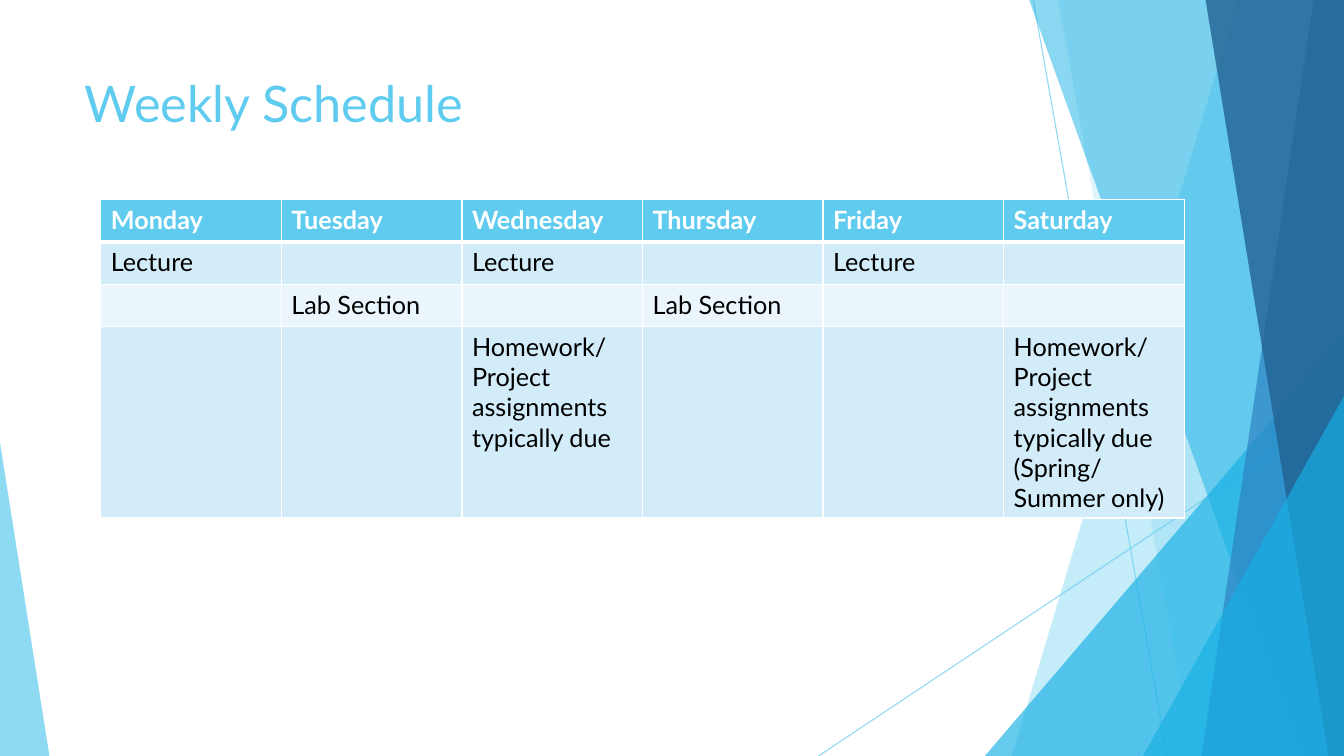
from lxml import etree
from pptx import Presentation
from pptx.dml.color import RGBColor
from pptx.enum.shapes import MSO_CONNECTOR, MSO_SHAPE
from pptx.enum.text import MSO_ANCHOR, MSO_AUTO_SIZE, PP_ALIGN
from pptx.oxml.ns import qn
from pptx.util import Inches, Pt

STRAIGHT = MSO_CONNECTOR.STRAIGHT
TRIANGLE = MSO_SHAPE.ISOSCELES_TRIANGLE
TOP = MSO_ANCHOR.TOP
LEFT = PP_ALIGN.LEFT
NO_AUTOFIT = MSO_AUTO_SIZE.NONE

WIDTH, HEIGHT = Inches(13.33), Inches(7.5)
FONT = "Lato"
COLORS = {
    "sky": "5FCBEF",
    "cyan": "17B0E4",
    "blue": "2E83C3",
    "navy": "226292",
    "band": "D2ECF9",
    "pale": "EAF6FC",
    "white": "FFFFFF",
    "black": "000000",
}
HOMEWORK = "Homework/ Project assignments typically due"
SCHEDULE = [
    ["Monday", "Tuesday", "Wednesday", "Thursday", "Friday", "Saturday"],
    ["Lecture", "", "Lecture", "", "Lecture", ""],
    ["", "Lab Section", "", "Lab Section", "", ""],
    ["", "", HOMEWORK, "", "", HOMEWORK + "\n(Spring/\nSummer only)"],
]
ROW_FILLS = ["sky", "band", "pale", "band"]
ROW_HEIGHTS = [5.6, 5.6, 5.6, 22.4]


def across(percent):
    """Turn a percentage of the slide width into a length."""
    return round(WIDTH * percent / 100)


def down(percent):
    """Turn a percentage of the slide height into a length."""
    return round(HEIGHT * percent / 100)


def rgb(name):
    """Look up a named colour."""
    return RGBColor.from_string(COLORS[name])


def set_opacity(shape, percent):
    """Make the first colour of a shape partly transparent."""
    color = next(shape._element.spPr.iter(qn("a:srgbClr")))
    etree.SubElement(color, qn("a:alpha"), val=str(percent * 1000))


def paint(shape, color, opacity):
    """Give a shape a plain translucent fill without outline or shadow."""
    shape.shadow.inherit = False
    shape.fill.solid()
    shape.fill.fore_color.rgb = rgb(color)
    shape.line.fill.background()
    set_opacity(shape, opacity)


def add_ray(slide, x1, y1, x2, y2):
    """Draw a thin decorative line."""
    ray = slide.shapes.add_connector(
        STRAIGHT, across(x1), down(y1), across(x2), down(y2))
    ray.line.color.rgb = rgb("sky")
    ray.line.width = Pt(0.75)
    set_opacity(ray, 70)
    etree.SubElement(ray._element.spPr, qn("a:effectLst"))


def add_shard(slide, top_x, bottom_x, color, opacity):
    """Draw a full-height band from a slanted edge to the right margin."""
    outline = slide.shapes.build_freeform(across(top_x), 0)
    outline.add_line_segments(
        [(WIDTH, 0), (WIDTH, HEIGHT), (across(bottom_x), HEIGHT)])
    paint(outline.convert_to_shape(), color, opacity)


def add_corner(slide, left, right, top, apex, color, opacity):
    """Draw a right triangle standing on the bottom edge."""
    corner = slide.shapes.add_shape(
        TRIANGLE, across(left), down(top),
        across(right - left), down(100 - top))
    corner.adjustments[0] = apex
    paint(corner, color, opacity)


def add_facets(slide):
    """Draw the layered decoration from back to front."""
    add_ray(slide, 76.88, 0, 86.85, 100)
    add_ray(slide, 100, 53.73, 60.9, 100)
    add_shard(slide, 92.1, 75.3, "sky", 36)
    add_shard(slide, 78.75, 88.73, "sky", 20)
    add_corner(slide, 73.28, 100, 44.4, 1, "cyan", 66)
    add_shard(slide, 76.58, 96.83, "cyan", 50)
    add_shard(slide, 97.73, 89.4, "blue", 70)
    add_shard(slide, 89.7, 98.85, "navy", 80)
    add_corner(slide, 85.05, 100, 52.4, 1, "cyan", 66)
    add_corner(slide, 0, 3.68, 58.53, 0, "sky", 70)


def format_text(frame, size, color, bold=False):
    """Format every run of a text frame."""
    for paragraph in frame.paragraphs:
        paragraph.alignment = LEFT
        for run in paragraph.runs:
            run.font.name = FONT
            run.font.size = Pt(size)
            run.font.bold = bold
            run.font.color.rgb = rgb(color)


def set_title(slide, text):
    """Fill and place the title placeholder."""
    title = slide.shapes.title
    title.left, title.top = across(5.55), down(8.93)
    title.width, title.height = across(70.5), down(19.2)
    frame = title.text_frame
    frame.text = text
    frame.word_wrap = True
    frame.auto_size = NO_AUTOFIT
    frame.vertical_anchor = TOP
    format_text(frame, 36, "sky")


def add_borders(cell, row):
    """Draw white cell borders, with a thick rule below the header."""
    properties = cell._tc.get_or_add_tcPr()
    thick_side = {0: "lnB", 1: "lnT"}.get(row)
    for side in ("lnL", "lnR", "lnT", "lnB"):
        width = Pt(3 if side == thick_side else 1)
        line = etree.SubElement(properties, qn("a:" + side), w=str(width))
        fill = etree.SubElement(line, qn("a:solidFill"))
        etree.SubElement(fill, qn("a:srgbClr"), val=COLORS["white"])


def add_schedule(slide):
    """Build the weekly timetable."""
    days = len(SCHEDULE[0])
    table = slide.shapes.add_table(
        len(SCHEDULE), days, across(7.5), down(26.4),
        across(80.63), down(sum(ROW_HEIGHTS))).table
    for r, entries in enumerate(SCHEDULE):
        table.rows[r].height = down(ROW_HEIGHTS[r])
        for c, entry in enumerate(entries):
            cell = table.cell(r, c)
            add_borders(cell, r)
            cell.fill.solid()
            cell.fill.fore_color.rgb = rgb(ROW_FILLS[r])
            cell.text_frame.text = entry
            header = r == 0
            format_text(cell.text_frame, 18,
                        "white" if header else "black", header)


def main():
    """Create the weekly schedule slide."""
    deck = Presentation()
    deck.slide_width, deck.slide_height = WIDTH, HEIGHT
    slide = deck.slides.add_slide(deck.slide_layouts[5])
    add_facets(slide)
    set_title(slide, "Weekly Schedule")
    add_schedule(slide)
    deck.save("out.pptx")


if __name__ == "__main__":
    main()
